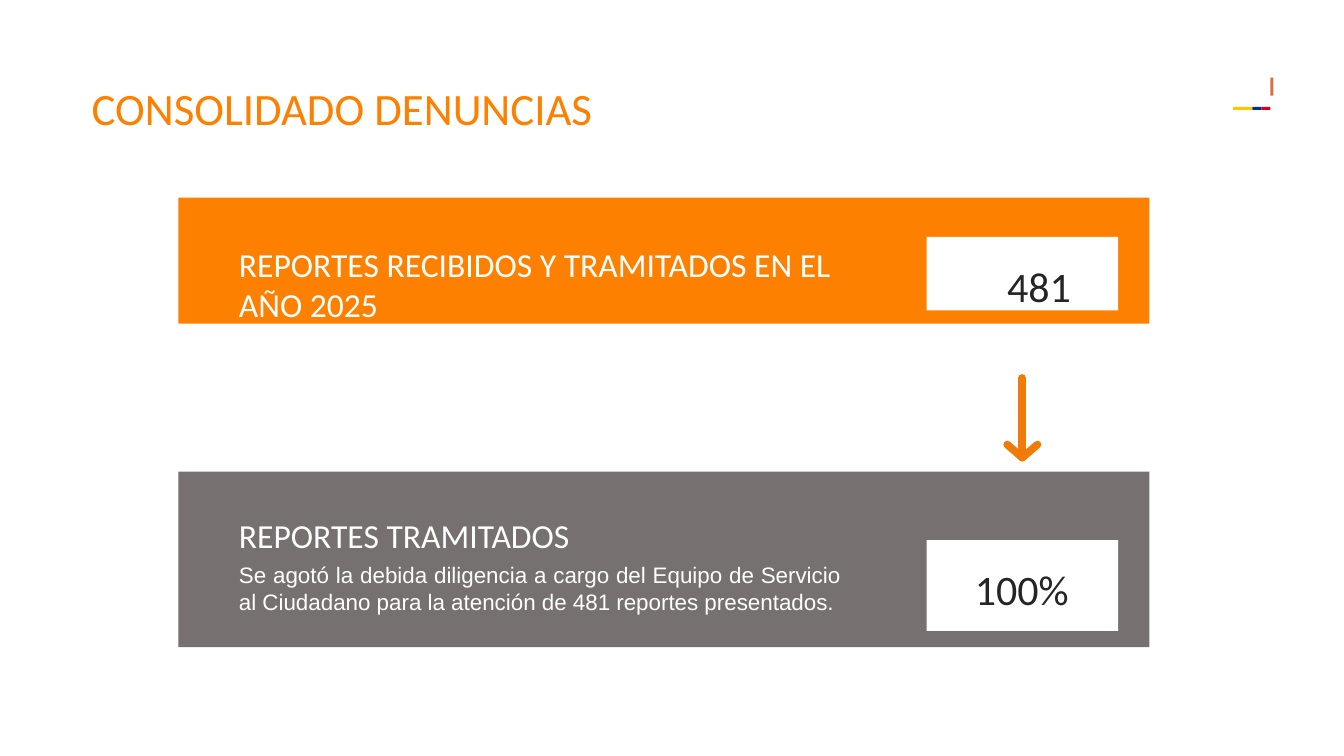
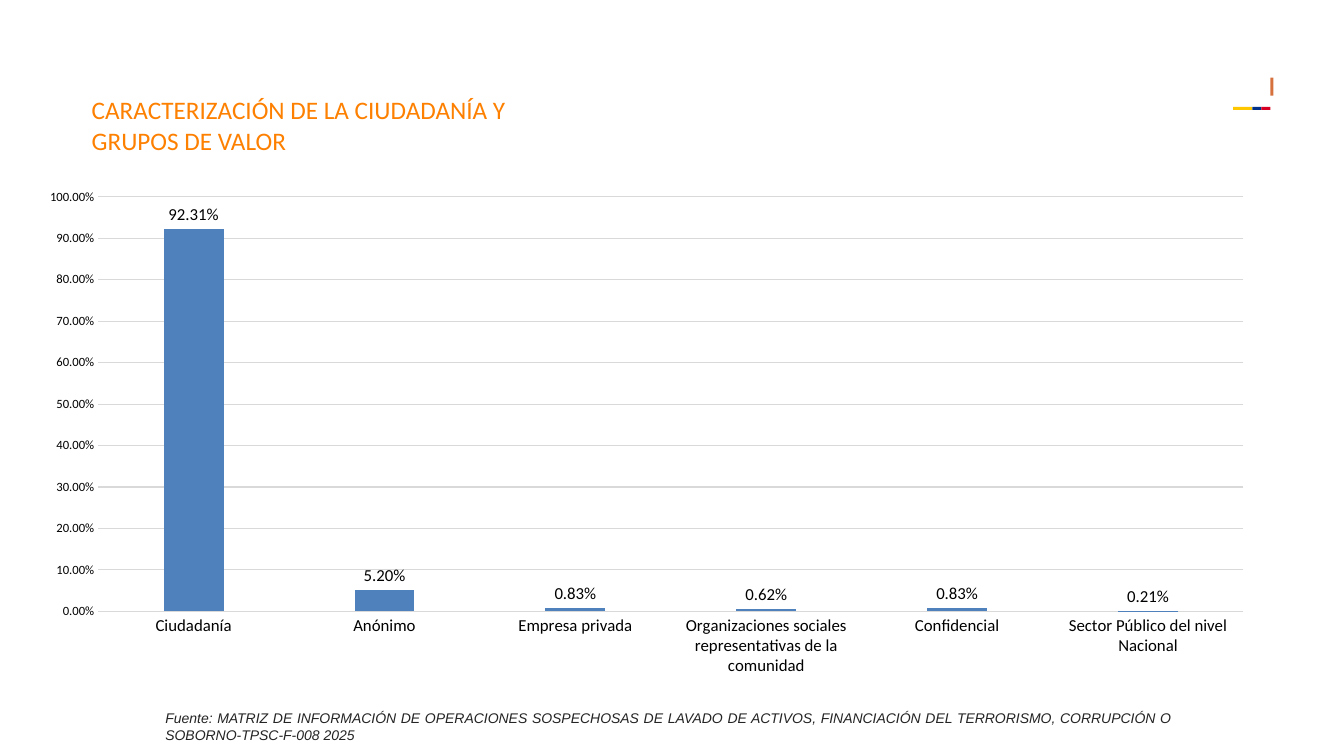
import pptx
import pptx.chart.data
import pptx.dml.color
import pptx.enum.chart
import pptx.enum.shapes
import pptx.enum.text
import pptx.util
from lxml import etree
from pptx.util import Inches, Pt

COLORS = {
    "orange": "FD8000", "arrow": "F07B08", "gray": "767070", "white": "FFFFFF",
    "dark": "252525", "source": "242424", "black": "000000", "grid": "D9D9D9",
    "bar": "4F81BD", "accent": "D6713E",
    "yellow": "FFC700", "blue": "003088", "red": "D70024",
}
HEADING_FONT = "Calibri"
BODY_FONT = "Arial"
TITLE_LEFT = 0.9
PANEL_LEFT, PANEL_WIDTH = 1.77, 9.63


def color(name):
    return pptx.dml.color.RGBColor.from_string(COLORS[name])


def style_font(font, name, size, color_name, italic=None):
    font.name = name
    font.size = Pt(size)
    font.color.rgb = color(color_name)
    font.italic = italic


def prepare_frame(text_frame, left=0, top=0, right=0):
    """Fix the insets (inches), wrapping and top anchor of a text frame."""
    text_frame.margin_left = Inches(left)
    text_frame.margin_top = Inches(top)
    text_frame.margin_right = Inches(right)
    text_frame.margin_bottom = 0
    text_frame.word_wrap = True
    text_frame.auto_size = pptx.enum.text.MSO_AUTO_SIZE.NONE
    text_frame.vertical_anchor = pptx.enum.text.MSO_ANCHOR.TOP


def add_rectangle(slide, left, top, width, height, fill):
    shape = slide.shapes.add_shape(
        pptx.enum.shapes.MSO_SHAPE.RECTANGLE,
        Inches(left), Inches(top), Inches(width), Inches(height))
    shape.shadow.inherit = False
    shape.fill.solid()
    shape.fill.fore_color.rgb = color(fill)
    shape.line.fill.background()
    return shape


def add_corner_mark(slide, left, top):
    add_rectangle(slide, left + 0.37, top, 0.03, 0.18, "accent")
    for offset, width, fill in ((0, 0.19, "yellow"), (0.19, 0.09, "blue"), (0.28, 0.09, "red")):
        add_rectangle(slide, left + offset, top + 0.29, width, 0.03, fill)


def add_titled_slide(presentation, title, top, width, height, size):
    slide = presentation.slides.add_slide(presentation.slide_layouts[5])
    add_corner_mark(slide, 12.23, 0.77)
    shape = slide.shapes.title
    shape.left, shape.top = Inches(TITLE_LEFT), Inches(top)
    shape.width, shape.height = Inches(width), Inches(height)
    shape.text_frame.text = title
    prepare_frame(shape.text_frame, left=0.01, top=0.02)
    for paragraph in shape.text_frame.paragraphs:
        paragraph.alignment = pptx.enum.text.PP_ALIGN.LEFT
        style_font(paragraph.font, HEADING_FONT, size, "orange")
    return slide


def add_panel(slide, top, height, fill, text_top, heading, detail=None):
    panel = add_rectangle(slide, PANEL_LEFT, top, PANEL_WIDTH, height, fill)
    text_frame = panel.text_frame
    text_frame.text = heading
    prepare_frame(text_frame, left=0.6, top=text_top, right=3.06)
    paragraph = text_frame.paragraphs[0]
    paragraph.alignment = pptx.enum.text.PP_ALIGN.LEFT
    style_font(paragraph.font, HEADING_FONT, 24, "white")
    if detail:
        paragraph = text_frame.add_paragraph()
        paragraph.text = detail
        paragraph.alignment = pptx.enum.text.PP_ALIGN.JUSTIFY
        paragraph.space_before = Pt(4.2)
        style_font(paragraph.font, BODY_FONT, 16, "white")


def add_value_box(slide, top, height, value, indent):
    box = add_rectangle(slide, PANEL_LEFT + 7.42, top, 1.9, height, "white")
    box.text_frame.text = value
    prepare_frame(box.text_frame, left=indent, top=0.23)
    paragraph = box.text_frame.paragraphs[0]
    paragraph.alignment = pptx.enum.text.PP_ALIGN.LEFT
    style_font(paragraph.font, HEADING_FONT, 30, "dark")


def add_down_arrow(slide, center, top, bottom):
    """Draw a round-ended arrow between two heights."""
    head_width, head_height = 0.15, 0.13
    tip = (Inches(center), Inches(bottom))
    builder = slide.shapes.build_freeform(Inches(center), Inches(top))
    builder.add_line_segments([tip], close=False)
    builder.move_to(Inches(center - head_width), Inches(bottom - head_height))
    builder.add_line_segments(
        [tip, (Inches(center + head_width), Inches(bottom - head_height))], close=False)
    arrow = builder.convert_to_shape()
    arrow.shadow.inherit = False
    arrow.fill.background()
    arrow.line.color.rgb = color("arrow")
    arrow.line.width = Pt(5.5)
    line = arrow.line._get_or_add_ln()
    line.set("cap", "rnd")
    etree.SubElement(line, pptx.oxml.ns.qn("a:round"))


def add_share_chart(slide, left, top, width, height, shares):
    data = pptx.chart.data.CategoryChartData(number_format="0.00%")
    data.categories = list(shares)
    data.add_series("Series 1", list(shares.values()))
    chart = slide.shapes.add_chart(
        pptx.enum.chart.XL_CHART_TYPE.COLUMN_CLUSTERED,
        Inches(left), Inches(top), Inches(width), Inches(height), data).chart
    chart.has_legend = False
    chart.has_title = False
    style_font(chart.font, HEADING_FONT, 10, "black")

    plot = chart.plots[0]
    plot.vary_by_categories = False
    plot.gap_width = 219
    plot.overlap = -27
    series = plot.series[0]
    series.format.fill.solid()
    series.format.fill.fore_color.rgb = color("bar")
    labels = series.data_labels
    labels.show_value = True
    labels.position = pptx.enum.chart.XL_LABEL_POSITION.OUTSIDE_END
    labels.number_format = "0.00%"
    labels.number_format_is_linked = False
    style_font(labels.font, HEADING_FONT, 12, "black")

    for axis, size in ((chart.category_axis, 12), (chart.value_axis, 9)):
        axis.major_tick_mark = pptx.enum.chart.XL_TICK_MARK.NONE
        axis.minor_tick_mark = pptx.enum.chart.XL_TICK_MARK.NONE
        style_font(axis.tick_labels.font, HEADING_FONT, size, "black")
    value_axis = chart.value_axis
    value_axis.minimum_scale, value_axis.maximum_scale = 0, 1
    value_axis.major_unit = 0.1
    value_axis.tick_labels.number_format = "0.00%"
    value_axis.tick_labels.number_format_is_linked = False
    value_axis.format.line.fill.background()
    for line in (chart.category_axis.format.line, value_axis.major_gridlines.format.line):
        line.color.rgb = color("grid")
        line.width = Pt(0.75)


def add_source_note(slide, left, top, width, height, text):
    box = slide.shapes.add_textbox(Inches(left), Inches(top), Inches(width), Inches(height))
    box.text_frame.text = text
    prepare_frame(box.text_frame, left=0.01, top=0.02, right=0.1)
    paragraph = box.text_frame.paragraphs[0]
    paragraph.alignment = pptx.enum.text.PP_ALIGN.JUSTIFY
    style_font(paragraph.font, BODY_FONT, 10, "source", italic=True)


def build_reports_slide(presentation):
    slide = add_titled_slide(presentation, "CONSOLIDADO DENUNCIAS", 0.78, 5, 0.78, 32)
    add_panel(slide, 4.68, 1.74, "gray", 0.43, "REPORTES TRAMITADOS",
              "Se agotó la debida diligencia a cargo del Equipo de Servicio "
              "al Ciudadano para la atención de 481 reportes presentados.")
    add_panel(slide, 1.96, 1.25, "orange", 0.46,
              "REPORTES RECIBIDOS Y TRAMITADOS EN EL AÑO 2025")
    add_value_box(slide, 2.35, 0.73, "481", 0.8)
    add_value_box(slide, 5.36, 0.9, "100%", 0.48)
    add_down_arrow(slide, 10.14, 3.75, 4.54)


def build_groups_slide(presentation):
    slide = add_titled_slide(
        presentation, "CARACTERIZACIÓN DE LA CIUDADANÍA Y\nGRUPOS DE VALOR",
        0.92, 4.3, 0.63, 18)
    add_source_note(
        slide, 1.63, 7.02, 10.08, 0.36,
        "Fuente: MATRIZ DE INFORMACIÓN DE OPERACIONES SOSPECHOSAS DE LAVADO DE ACTIVOS, "
        "FINANCIACIÓN DEL TERRORISMO, CORRUPCIÓN O SOBORNO-TPSC-F-008 2025")
    add_share_chart(slide, 0.25, 1.78, 12.33, 5.02, {
        "Ciudadanía": 0.9231,
        "Anónimo": 0.052,
        "Empresa privada": 0.0083,
        "Organizaciones sociales representativas de la comunidad": 0.0062,
        "Confidencial": 0.0083,
        "Sector Público del nivel Nacional": 0.0021,
    })


def main():
    presentation = pptx.Presentation()
    presentation.slide_width = Inches(13.33)
    presentation.slide_height = Inches(7.5)
    build_reports_slide(presentation)
    build_groups_slide(presentation)
    presentation.save("out.pptx")


if __name__ == "__main__":
    main()
